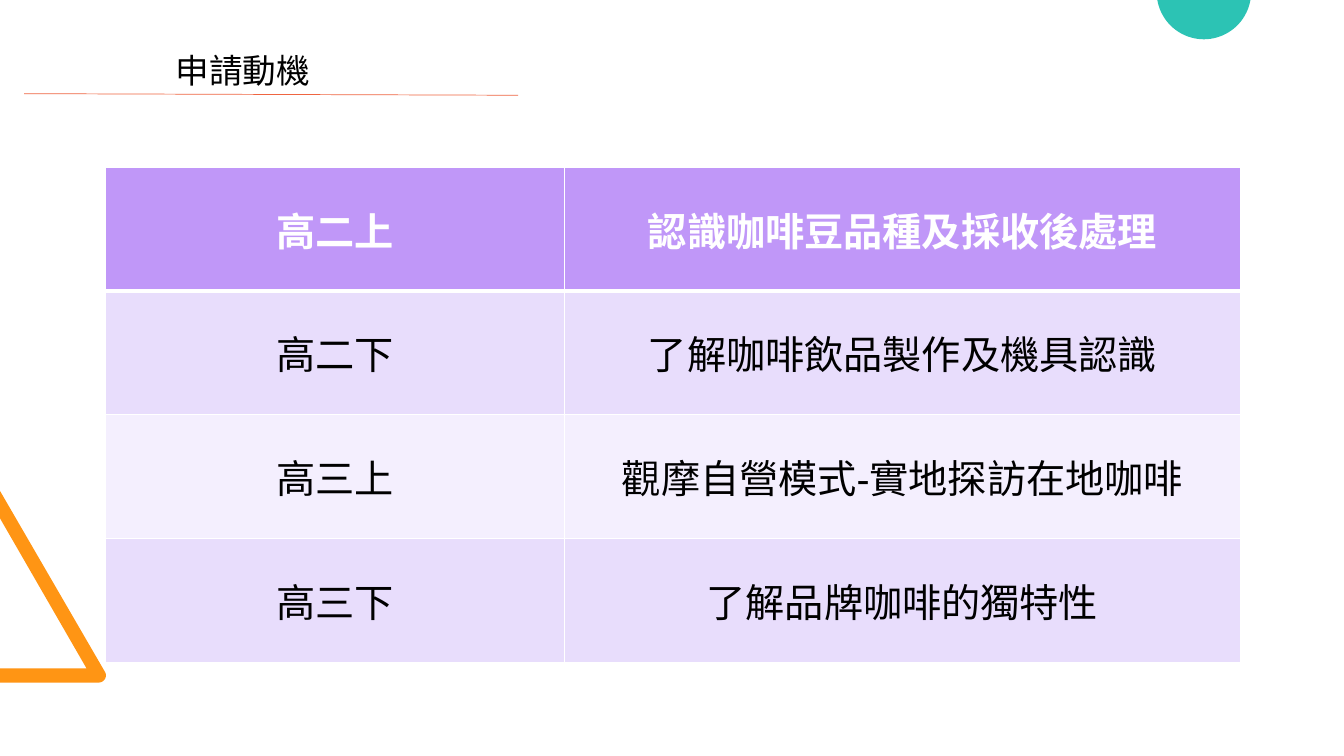
"""Build the slide on the reasons for applying, with a table of four terms."""
from dataclasses import dataclass
from math import cos, radians, sin

from lxml import etree
from pptx import Presentation
from pptx.dml.color import RGBColor
from pptx.enum.shapes import MSO_CONNECTOR
from pptx.enum.text import MSO_ANCHOR, MSO_AUTO_SIZE, PP_ALIGN
from pptx.oxml.ns import qn
from pptx.util import Cm, Pt

LEFT, CENTER = PP_ALIGN.LEFT, PP_ALIGN.CENTER
MIDDLE, TOP = MSO_ANCHOR.MIDDLE, MSO_ANCHOR.TOP
STRAIGHT = MSO_CONNECTOR.STRAIGHT
FIT = MSO_AUTO_SIZE.SHAPE_TO_FIT_TEXT

TITLE = "申請動機"
TERMS = [
    ("高二上", "認識咖啡豆品種及採收後處理"),
    ("高二下", "了解咖啡飲品製作及機具認識"),
    ("高三上", "觀摩自營模式-實地探訪在地咖啡"),
    ("高三下", "了解品牌咖啡的獨特性"),
]
COLS = (11.57, 17.04)
ROW = 3.12


@dataclass(frozen=True)
class Theme:
    font: str = "Arial"
    head: int = 24
    body: int = 28
    ink: str = "000000"
    white: str = "FFFFFF"
    rule: str = "EF6541"
    orange: str = "FF9514"
    teal: str = "2CC3B4"
    top: str = "C097F8"
    bands: tuple = ("F4EFFE", "E8DDFC")


THEME = Theme()


def rgb(code):
    return RGBColor.from_string(code)


def write(frame, text, size=THEME.body, color=THEME.ink, bold=False, align=CENTER):
    para = frame.paragraphs[0]
    para.alignment = align
    run = para.add_run()
    run.text = text
    font = run.font
    font.name, font.size, font.bold = THEME.font, Pt(size), bold
    font.color.rgb = rgb(color)


def arc(x, y, radius, start, end, steps=40):
    turns = [radians(start + (end - start) * i / steps) for i in range(steps + 1)]
    return [(x + radius * cos(t), y + radius * sin(t)) for t in turns]


def draw(slide, points, color):
    spots = [(Cm(x), Cm(y)) for x, y in points]
    pen = slide.shapes.build_freeform(*spots[0])
    pen.add_line_segments(spots[1:], close=True)
    shape = pen.convert_to_shape()
    shape.shadow.inherit = False
    shape.fill.solid()
    shape.fill.fore_color.rgb = rgb(color)
    shape.line.fill.background()


def edge(cell, side, width):
    line = etree.SubElement(cell._tc.get_or_add_tcPr(), qn(f"a:ln{side}"), w=str(Pt(width)))
    fill = etree.SubElement(line, qn("a:solidFill"))
    etree.SubElement(fill, qn("a:srgbClr"), val=THEME.white)


def add_title(slide):
    title = slide.shapes.title
    title.left, title.top, title.width, title.height = Cm(4.17), Cm(1.12), Cm(3.94), Cm(1.27)
    frame = title.text_frame
    frame.word_wrap, frame.auto_size, frame.vertical_anchor = False, FIT, TOP
    write(frame, TITLE, size=THEME.head, align=LEFT)
    rule = slide.shapes.add_connector(STRAIGHT, Cm(0.61), Cm(2.36), Cm(13.06), Cm(2.4))
    rule.line.color.rgb = rgb(THEME.rule)
    rule.line.width = Pt(0.5)
    etree.SubElement(rule._element.spPr, qn("a:effectLst"))


def add_terms(slide):
    table = slide.shapes.add_table(
        len(TERMS), len(COLS), Cm(2.65), Cm(4.21), Cm(sum(COLS)), Cm(ROW * len(TERMS))
    ).table
    for col, width in zip(table.columns, COLS):
        col.width = Cm(width)
    for r, texts in enumerate(TERMS):
        table.rows[r].height = Cm(ROW)
        head = r == 0
        for c, text in enumerate(texts):
            cell = table.cell(r, c)
            for side in "LRTB":
                thick = (r, side) in ((0, "B"), (1, "T"))
                edge(cell, side, 3 if thick else 1)
            cell.fill.solid()
            cell.fill.fore_color.rgb = rgb(THEME.top if head else THEME.bands[r % 2])
            cell.vertical_anchor = MIDDLE
            write(cell.text_frame, text, color=THEME.white if head else THEME.ink, bold=head)


def main():
    deck = Presentation()
    deck.slide_width, deck.slide_height = Cm(33.87), Cm(19.05)
    slide = deck.slides.add_slide(deck.slide_layouts[5])
    wedge = [(0, 17.2), (0, 16.84), (2.18, 16.84), (0, 13.06), (0, 12.37)]
    draw(slide, wedge + arc(2.49, 17.02, 0.18, -30, 90), THEME.orange)
    draw(slide, arc(30.34, -0.2, 1.19, 9.7, 170.3), THEME.teal)
    add_title(slide)
    add_terms(slide)
    deck.save("out.pptx")


if __name__ == "__main__":
    main()
